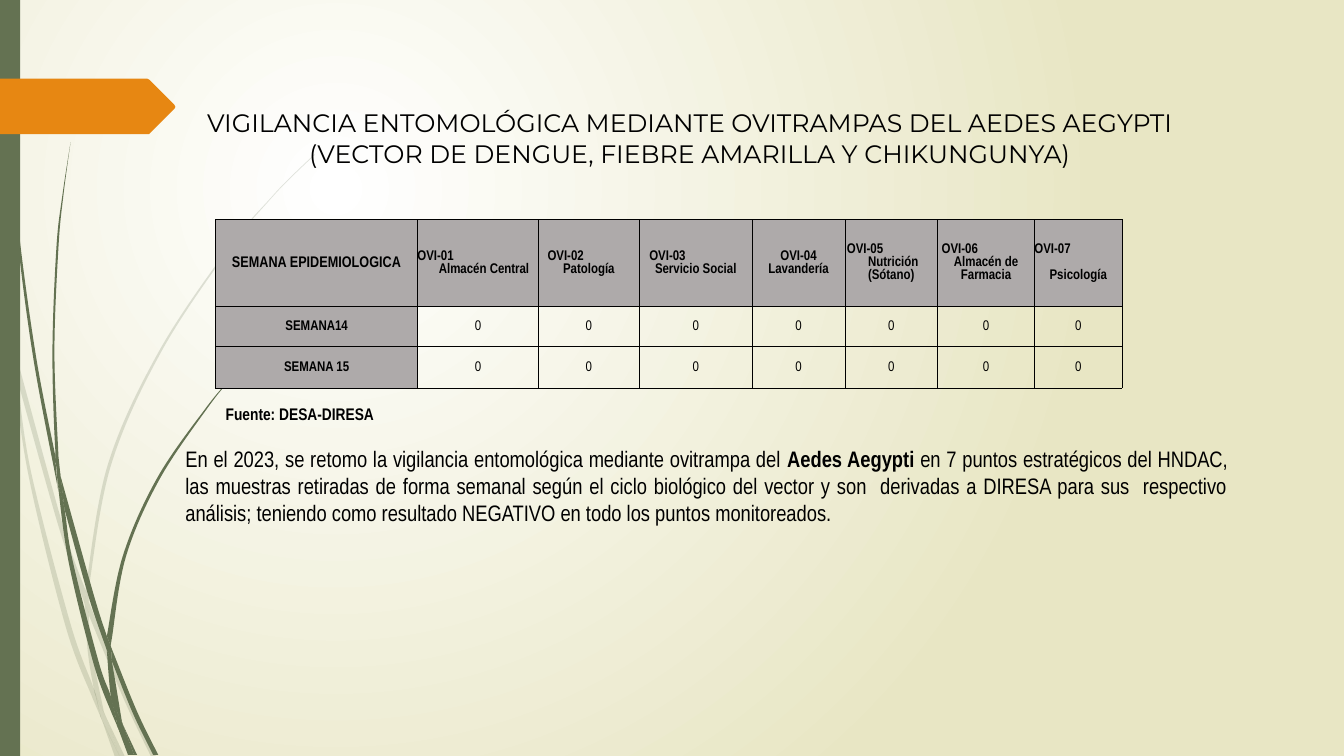
from dataclasses import dataclass
from itertools import product

from lxml.etree import SubElement
from pptx import Presentation
from pptx.dml.color import RGBColor as Rgb
from pptx.enum.shapes import MSO_SHAPE as Kind
from pptx.enum.text import MSO_ANCHOR as Anchor, MSO_AUTO_SIZE as Auto, PP_ALIGN as Align
from pptx.oxml import parse_xml
from pptx.oxml.ns import nsdecls, qn
from pptx.util import Pt

SCALE = 9144  # EMU per px, 100 px to the inch


@dataclass(frozen=True)
class Theme:
    green: str = "647252"
    orange: str = "E78712"
    gray: str = "AEAAAA"
    ink: str = "000000"
    white: str = "FFFFFF"
    cream: str = "E8E6C4"
    head: str = "Montserrat"
    body: str = "Arial Narrow"
    title: int = 18
    text: int = 16
    note: int = 12
    lead: int = 11
    cell: int = 10


# Grass blades: each has a left and a right edge
FAINT = [
    ([(0, 299), (10, 344), (11, 350)], [(9, 322), (0, 282)]),
    ([(14, 345), (62, 520), (85, 586)], [(84, 599), (58, 522), (17, 376)]),
    ([(88, 596), (92, 607), (127, 692), (155, 751)], [(150, 751), (123, 694), (88, 610)]),
    ([(105, 711), (124, 751)], [(119, 751)]),
    ([(11, 350), (17, 376), (31, 469), (70, 619), (93, 683), (99, 707), (101, 714)],
     [(92, 693), (65, 621), (28, 470), (11, 350)]),
    ([(84, 599), (87, 646), (93, 683), (96, 692), (105, 711)],
     [(103, 706), (91, 646), (88, 610), (88, 608)]),
    ([(312, 153), (289, 175), (268, 197), (228, 244), (158, 348), (107, 461), (85, 584)],
     [(85, 586), (88, 596)],
     [(88, 584), (110, 462), (160, 349), (229, 245), (268, 198), (290, 175), (312, 154)]),
    ([(101, 714), (114, 751)], [(119, 751)]),
    ([(85, 586), (84, 599)], [(88, 608), (88, 596)]),
    ([(93, 683), (99, 707), (101, 714), (119, 751)], [(105, 711), (96, 692)]),
]
SOLID = [
    ([(3, 0), (4, 48), (7, 110), (17, 233), (33, 355), (56, 477), (57, 481)],
     [(55, 457), (55, 453), (36, 355), (19, 232), (8, 109), (5, 48), (4, 0)]),
    ([(60, 472), (93, 590), (106, 631)], [(106, 645), (88, 592), (64, 505)]),
    ([(110, 641), (113, 649), (136, 706), (157, 749)], [(152, 749), (132, 708), (111, 656)]),
    ([(57, 477), (64, 505), (72, 556), (98, 657), (110, 691), (117, 722)],
     [(111, 708), (93, 659), (68, 557), (57, 477)]),
    ([(70, 141), (62, 193), (56, 245), (52, 349), (55, 449), (60, 472)],
     [(58, 453), (54, 349), (58, 245), (63, 193), (70, 141)]),
    ([(122, 719), (136, 749)], [(133, 749)]),
    ([(55, 449), (60, 472), (64, 505)], [(57, 477), (55, 453)]),
    ([(260, 344), (245, 358), (231, 373), (204, 405), (156, 474), (122, 551), (106, 631)],
     [(110, 641), (111, 633), (125, 552), (158, 476), (205, 406), (231, 374), (261, 344)]),
    ([(117, 722), (127, 749)], [(131, 749)]),
    ([(106, 645), (110, 691), (116, 706), (122, 719)], [(121, 716), (111, 656), (109, 651)]),
    ([(106, 631), (106, 645)], [(111, 656), (110, 641)]),
    ([(110, 691), (116, 717), (117, 722), (130, 749)], [(133, 749), (122, 719), (116, 706)]),
]


def px(n):
    return round(n * SCALE)


def bend(edge):
    """Yield the three Bezier points of each step of a smooth curve."""
    ends = [edge[0], *edge, edge[-1]]
    for a, b, c, d in zip(ends, ends[1:], ends[2:], ends[3:]):
        yield (tuple(q + (r - p) / 6 for p, q, r in zip(a, b, c)),
               tuple(r - (s - q) / 6 for q, r, s in zip(b, c, d)), c)


class Deck:
    def __init__(self, theme, wide, high):
        self.theme = theme
        self.prs = Presentation()
        self.prs.slide_width, self.prs.slide_height = px(wide), px(high)
        self.slide = self.prs.slides.add_slide(self.prs.slide_layouts[6])
        self.shapes = self.slide.shapes

    def back(self, inner, outer):
        fill = self.slide.background.fill
        fill.gradient()
        for stop, color in zip(fill.gradient_stops, (inner, outer)):
            stop.color.rgb = Rgb.from_string(color)
        grad = self.slide.background._cSld.find(".//" + qn("a:gradFill"))
        grad.remove(grad.find(qn("a:lin")))
        grad.append(parse_xml(
            f'<a:path {nsdecls("a")} path="circle"><a:fillToRect '
            'l="50000" t="50000" r="100000" b="100000"/></a:path>'))

    def paint(self, shape, color, alpha=100):
        shape.shadow.inherit = False
        shape.line.fill.background()
        shape.fill.solid()
        shape.fill.fore_color.rgb = Rgb.from_string(color)
        if alpha < 100:
            tone = shape._element.spPr.find(".//" + qn("a:srgbClr"))
            SubElement(tone, qn("a:alpha"), val=str(alpha * 1000))

    def rect(self, x, y, w, h, color):
        self.paint(self.shapes.add_shape(Kind.RECTANGLE, px(x), px(y), px(w), px(h)), color)

    def poly(self, pts, color, alpha=100):
        first, *rest = [(px(x), px(y)) for x, y in pts]
        pen = self.shapes.build_freeform(*first, scale=1.0)
        pen.add_line_segments(rest, close=True)
        shape = pen.convert_to_shape()
        self.paint(shape, color, alpha)
        return shape

    def blade(self, edges, alpha=100):
        shape = self.poly([pt for edge in edges for pt in edge], self.theme.green, alpha)
        lines = iter(shape._element.findall(".//" + qn("a:lnTo")))
        for i, edge in enumerate(edges):
            if i:
                next(lines)  # the straight step between two edges
            for curve in bend(edge):
                line = next(lines)
                cubic = line.makeelement(qn("a:cubicBezTo"))
                for x, y in curve:
                    SubElement(cubic, qn("a:pt"), x=str(px(x) - shape.left),
                               y=str(px(y) - shape.top))
                line.getparent().replace(line, cubic)

    def run(self, para, text, size, font=None, bold=False):
        run = para.add_run()
        run.text = text
        run.font.size, run.font.bold = Pt(size), bold
        run.font.name = font or self.theme.body
        run.font.color.rgb = Rgb.from_string(self.theme.ink)

    def text(self, x, y, w, h, runs, size, align=Align.LEFT, font=None, wrap=True):
        frame = self.shapes.add_textbox(px(x), px(y), px(w), px(h)).text_frame
        frame.word_wrap, frame.auto_size = wrap, Auto.SHAPE_TO_FIT_TEXT
        para = frame.paragraphs[0]
        para.alignment = align
        for words, bold in runs:
            self.run(para, words, size, font, bold)

    def grid(self, x, y, cols, rows):
        table = self.shapes.add_table(len(rows), len(cols), px(x), px(y),
                                      px(sum(cols)), px(sum(rows))).table
        table.first_row = table.horz_banding = False
        for part, size in zip(table.columns, cols):
            part.width = px(size)
        for part, size in zip(table.rows, rows):
            part.height = px(size)
        return table

    def cell(self, cell, lines, size, bold=False, fill=None, indent=None, gap=0, shift=0):
        """An indent sets the first line to the left; the others stay centred."""
        cell.margin_left = cell.margin_right = cell.margin_top = cell.margin_bottom = 0
        cell.vertical_anchor = Anchor.MIDDLE
        props = cell._tc.get_or_add_tcPr()
        for side in "LRTB":
            props.append(parse_xml(
                f'<a:ln{side} {nsdecls("a")} w="6350"><a:solidFill><a:srgbClr '
                f'val="{self.theme.ink}"/></a:solidFill></a:ln{side}>'))
        if fill:
            cell.fill.solid()
            cell.fill.fore_color.rgb = Rgb.from_string(fill)
        else:
            cell.fill.background()
        for i, words in enumerate(lines):
            frame = cell.text_frame
            para = frame.add_paragraph() if i else frame.paragraphs[0]
            para.alignment = Align.CENTER
            if i == 0 and indent is not None:
                para.alignment = Align.LEFT
                para._p.get_or_add_pPr().set("marL", str(px(indent)))
            elif i == 1:
                para.space_before = Pt(gap)
                para._p.get_or_add_pPr().set("marL", str(px(shift)))
            self.run(para, words, size, bold=bold)


def main():
    th = Theme()
    deck = Deck(th, 1333, 750)
    deck.back(th.white, th.cream)

    # Grass, side bar and arrow tab
    for blades, alpha in ((FAINT, 20), (SOLID, 100)):
        for edges in blades:
            deck.blade(edges, alpha)
    deck.rect(0, 0, 20, 750, th.green)
    deck.poly([(0, 78), (146, 78), (148, 79), (173, 104), (174, 106), (173, 108),
               (148, 133), (146, 133), (0, 133)], th.orange)

    # Trap table: lines, first-line indent, gap and shift of the second line
    traps = [(["OVI-01", "Almacén Central"], 0, 0, 12),
             (["OVI-02", "Patología"], 9, 0, 0),
             (["OVI-03", "Servicio Social"], 10, 0, 0),
             (["OVI-04", "Lavandería"], None, 0, 0),
             (["OVI-05", "Nutrición", "(Sótano)"], 2, 0, 4),
             (["OVI-06", "Almacén de", "Farmacia"], 4, 0, 0),
             (["OVI-07", "Psicología"], 0, 9, 0)]
    weeks = ["SEMANA14", "SEMANA 15"]
    table = deck.grid(214, 218, [200, 120, 100, 112, 92, 92, 96, 87], [86, 40, 41])
    deck.cell(table.cell(0, 0), ["SEMANA EPIDEMIOLOGICA"], th.lead, True, th.gray)
    for col, (lines, *place) in enumerate(traps, 1):
        deck.cell(table.cell(0, col), lines, th.cell, True, th.gray, *place)
    for row, week in enumerate(weeks, 1):
        deck.cell(table.cell(row, 0), [week], th.cell, True, th.gray)
    for row, col in product(range(1, len(weeks) + 1), range(1, len(traps) + 1)):
        deck.cell(table.cell(row, col), ["0"], th.cell)

    # Title, source and summary
    deck.text(157, 102, 1054, 71, [(
        "VIGILANCIA ENTOMOLÓGICA MEDIANTE OVITRAMPAS DEL AEDES AEGYPTI "
        "(VECTOR DE DENGUE, FIEBRE AMARILLA Y CHIKUNGUNYA)", False)],
        th.title, Align.CENTER, th.head)
    deck.text(214, 396, 173, 30, [("Fuente: DESA-DIRESA", True)], th.note, wrap=False)
    deck.text(174, 437, 1054, 91, [
        ("En el 2023, se retomo la vigilancia entomológica mediante ovitrampa del ", False),
        ("Aedes Aegypti ", True),
        ("en 7 puntos estratégicos del HNDAC, las muestras retiradas de forma semanal "
         "según el ciclo biológico del vector y son  derivadas a DIRESA para sus  respectivo "
         "análisis; teniendo como resultado NEGATIVO en todo los puntos monitoreados.", False)],
        th.text, Align.JUSTIFY)

    deck.prs.save("out.pptx")


if __name__ == "__main__":
    main()
